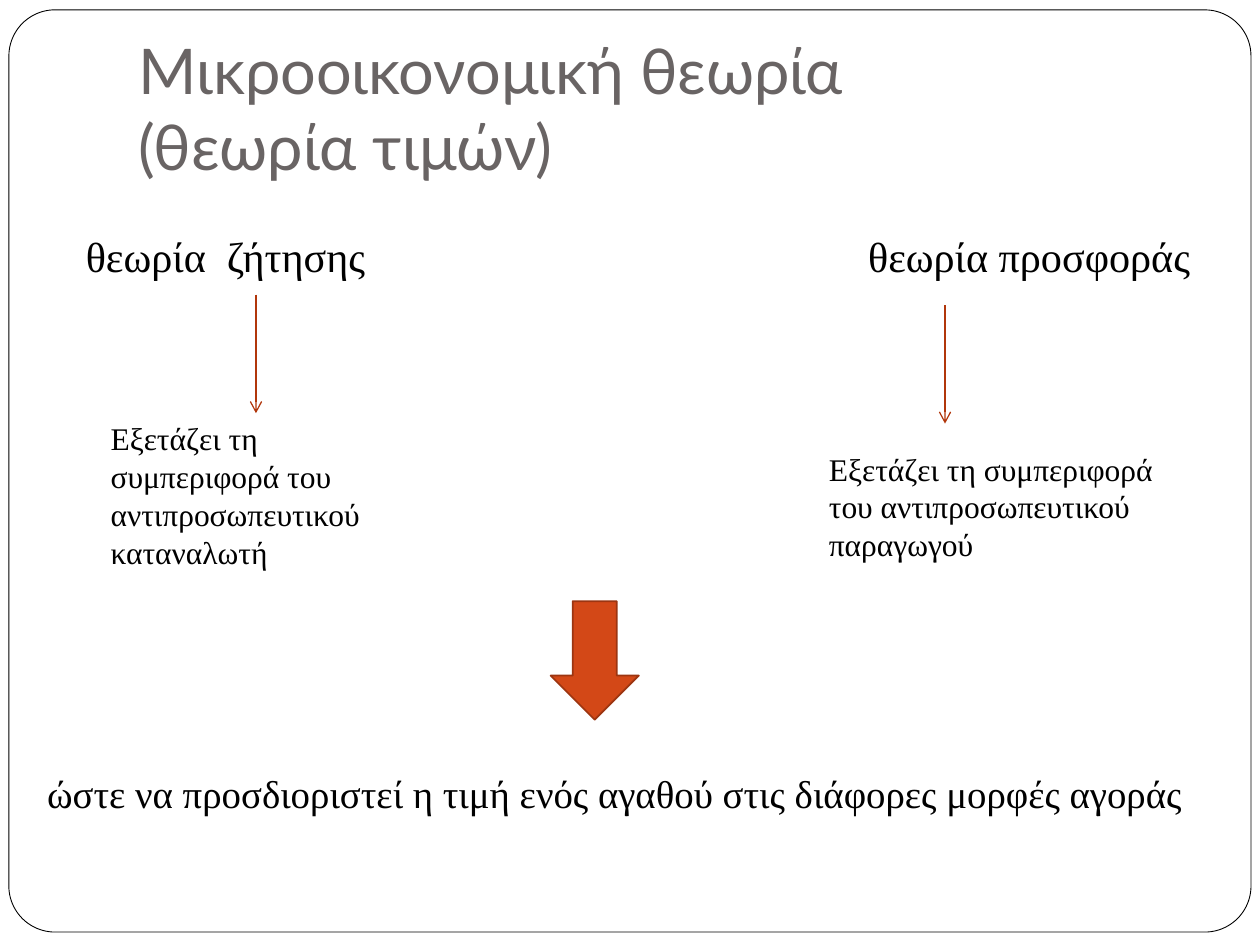
from dataclasses import dataclass

import pptx
import pptx.dml.color
import pptx.enum.shapes
import pptx.enum.text
import pptx.oxml
import pptx.oxml.ns
import pptx.util
from pptx.util import Cm


@dataclass(frozen=True)
class Theme:
    """Colours, fonts and type sizes of the slide."""
    paper: str = "FFFFFF"
    ink: str = "000000"
    title: str = "696464"
    accent: str = "D34817"
    accent_edge: str = "9C3511"
    arrow: str = "B1360B"
    title_font: str = "Lato"
    body_font: str = "Times New Roman"
    title_size: float = 36
    heading_size: float = 24.1
    conclusion_size: float = 22.2
    note_size: float = 18


@dataclass(frozen=True)
class Box:
    """A region of the slide in centimetres."""
    left: float
    top: float
    width: float
    height: float

    def inner(self, dx, dy, width, height):
        """Return a box offset from this one's corner."""
        return Box(self.left + dx, self.top + dy, width, height)

    def lengths(self):
        """Return left, top, width and height as lengths."""
        return [Cm(v) for v in (self.left, self.top, self.width, self.height)]


THEME = Theme()


def rgb(value):
    """Return a colour from its hex value."""
    return pptx.dml.color.RGBColor.from_string(value)


def add_text(slide, box, text, size, color=THEME.ink, font=THEME.body_font):
    """Add a wrapping text box and return its text frame."""
    tf = slide.shapes.add_textbox(*box.lengths()).text_frame
    tf.word_wrap = True
    p = tf.paragraphs[0]
    p.text = text
    for r in p.runs:
        r.font.name = font
        r.font.size = pptx.util.Pt(size)
        r.font.color.rgb = rgb(color)
    return tf


def add_shape(slide, kind, box, fill, line, weight):
    """Add a filled and outlined preset shape."""
    sp = slide.shapes.add_shape(kind, *box.lengths())
    sp.shadow.inherit = False
    sp.fill.solid()
    sp.fill.fore_color.rgb = rgb(fill)
    sp.line.color.rgb = rgb(line)
    sp.line.width = pptx.util.Pt(weight)
    return sp


def add_arrow(slide, x, top, length):
    """Add a thin vertical arrow pointing down."""
    line = slide.shapes.add_connector(
        pptx.enum.shapes.MSO_CONNECTOR.STRAIGHT,
        Cm(x), Cm(top), Cm(x), Cm(top + length))
    line.line.color.rgb = rgb(THEME.arrow)
    line.line.width = pptx.util.Pt(0.75)
    tail = pptx.oxml.parse_xml(
        f'<a:tailEnd {pptx.oxml.ns.nsdecls("a")} type="arrow"/>')
    line.line._get_or_add_ln().append(tail)
    line._element.spPr.append(pptx.oxml.parse_xml(
        f'<a:effectLst {pptx.oxml.ns.nsdecls("a")}/>'))


def add_frame(slide, box):
    """Add the rounded frame around the slide."""
    kind = pptx.enum.shapes.MSO_SHAPE.ROUNDED_RECTANGLE
    sp = add_shape(slide, kind, box, THEME.paper, THEME.ink, 0.5)
    sp.adjustments[0] = 0.05


def add_title(slide, box, text):
    """Add the title, set on the bottom of its box."""
    tf = add_text(slide, box, text, THEME.title_size, THEME.title, THEME.title_font)
    tf.vertical_anchor = pptx.enum.text.MSO_ANCHOR.BOTTOM
    tf.margin_bottom = Cm(0.25)


def add_branch(slide, box, heading, note, arrow_at, note_box):
    """Add a theory's heading, its arrow and what the theory examines."""
    add_text(slide, box.inner(0, 0, box.width, 1.3), heading, THEME.heading_size)
    dx, dy = arrow_at
    add_arrow(slide, box.left + dx, box.top + dy, 2.39)
    add_text(slide, box.inner(*note_box), note, THEME.note_size)


def add_conclusion(slide, box, text):
    """Add the block arrow and the closing sentence below it."""
    add_shape(slide, pptx.enum.shapes.MSO_SHAPE.DOWN_ARROW,
              box.inner(10.4, 0, 1.78, 2.39), THEME.accent, THEME.accent_edge, 1)
    add_text(slide, box.inner(0, 3.27, box.width, 1.2), text, THEME.conclusion_size)


def main():
    """Build the slide and save it."""
    prs = pptx.Presentation()
    prs.slide_width, prs.slide_height = Cm(25.4), Cm(19.05)
    slide = prs.slides.add_slide(prs.slide_layouts[6])
    add_frame(slide, Box(0.18, 0.2, 25.04, 18.59))
    add_title(slide, Box(2.54, 0.76, 21.59, 3.18),
              "Μικροοικονομική θεωρία\v(θεωρία τιμών)")
    add_branch(slide, Box(1.48, 4.52, 8, 7.14), "θεωρία  ζήτησης",
               "Εξετάζει τη συμπεριφορά του αντιπροσωπευτικού καταναλωτή",
               (3.68, 1.42), (0.5, 3.81, 6.35, 3.33))
    add_branch(slide, Box(17.25, 4.52, 8, 6.99), "θεωρία προσφοράς",
               "Εξετάζει τη συμπεριφορά του αντιπροσωπευτικού παραγωγού",
               (1.8, 1.63), (-0.79, 4.42, 7.14, 2.57))
    add_conclusion(slide, Box(0.7, 12.12, 24.4, 4.47),
                   "ώστε να προσδιοριστεί η τιμή ενός αγαθού στις διάφορες μορφές αγοράς")
    prs.save("out.pptx")


if __name__ == "__main__":
    main()
